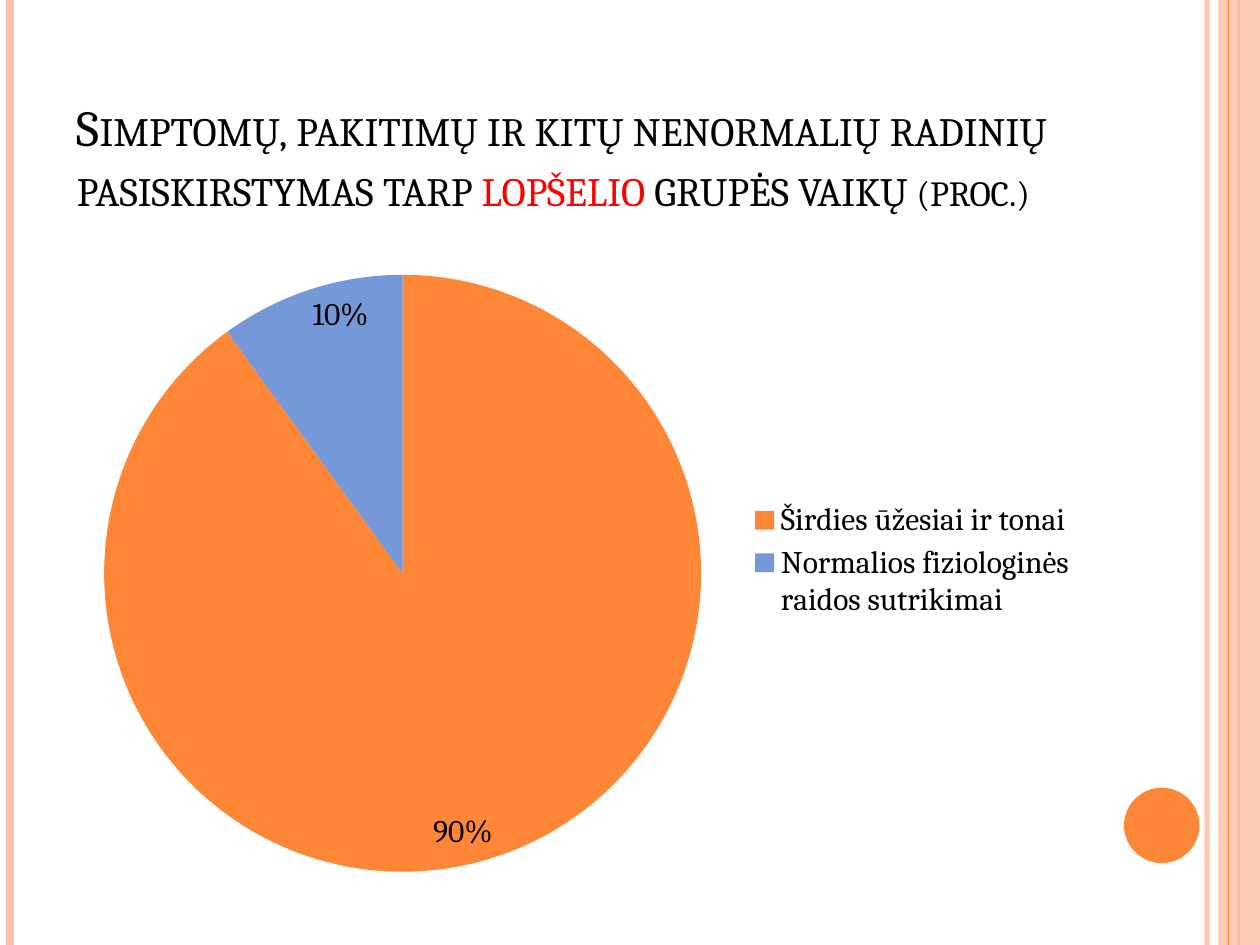
from lxml.etree import SubElement
from pptx import Presentation
from pptx.chart.data import CategoryChartData
from pptx.dml.color import RGBColor
from pptx.enum.chart import XL_CHART_TYPE, XL_LABEL_POSITION, XL_LEGEND_POSITION
from pptx.enum.shapes import MSO_CONNECTOR, MSO_SHAPE
from pptx.enum.text import MSO_ANCHOR
from pptx.oxml import parse_xml
from pptx.oxml.ns import nsdecls, qn
from pptx.util import Cm, Pt

FONT = "Cambria"
COLORS = {"black": "000000", "red": "FF0000", "orange": "FE8637",
          "peach": "FEC3AE", "blue": "7598D9"}
WIDTH, HEIGHT = 25.4, 19.05
TITLE = [
    ("Simptomų, pakitimų ir kitų nenormalių radinių pasiskirstymas tarp ", 28.8, "black"),
    ("lopšelio ", 28.8, "red"),
    ("grupės vaikų ", 28.8, "black"),
    ("(proc.)", 25.2, "black"),
]
SHARES = [("Širdies ūžesiai ir tonai", 0.9, "orange"),
          ("Normalios fiziologinės raidos sutrikimai", 0.1, "blue")]
BACK_STRIPES = [(24.33, 3, "peach", 93), (0.2, 4.5, "peach", 100), (24.97, 1.5, "orange", 100)]
FRONT_STRIPES = [(24.77, 0.75, "orange", 100)]
PIE_LAYOUT = ("inner", 0.04, 0.08, 0.58, 0.89)
LEGEND_LAYOUT = (None, 0.67, 0.41, 0.31, 0.19)


def color(name):
    return RGBColor.from_string(COLORS[name])


def set_opacity(shape, percent):
    fill_color = next(shape._element.spPr.iter(qn("a:srgbClr")))
    SubElement(fill_color, qn("a:alpha")).set("val", str(percent * 1000))


def add_stripes(slide, stripes):
    for x, weight, name, opacity in stripes:
        stripe = slide.shapes.add_connector(MSO_CONNECTOR.STRAIGHT, Cm(x), 0, Cm(x), Cm(HEIGHT))
        stripe.line.color.rgb = color(name)
        stripe.line.width = Pt(weight)
        SubElement(stripe._element.spPr, qn("a:effectLst"))
        if opacity < 100:
            set_opacity(stripe, opacity)


def add_plain_shape(slide, kind, box, name):
    shape = slide.shapes.add_shape(kind, *map(Cm, box))
    shape.shadow.inherit = False
    shape.fill.solid()
    shape.fill.fore_color.rgb = color(name)
    shape.line.fill.background()
    return shape


def add_title(slide):
    frame = slide.shapes.add_textbox(Cm(1.3), Cm(1.32), Cm(20.75), Cm(3.18)).text_frame
    frame.word_wrap = True
    frame.vertical_anchor = MSO_ANCHOR.BOTTOM
    paragraph = frame.paragraphs[0]
    paragraph.font.name = FONT
    for text, size, name in TITLE:
        run = paragraph.add_run()
        run.text = text
        run.font.name = FONT
        run.font.size = Pt(size)
        run.font.color.rgb = color(name)
        run._r.get_or_add_rPr().set("cap", "small")


def make_layout(target, x, y, width, height):
    values = [("layoutTarget", target)] if target else []
    values += [("xMode", "edge"), ("yMode", "edge"),
               ("x", x), ("y", y), ("w", width), ("h", height)]
    items = "".join(f'<c:{tag} val="{value}"/>' for tag, value in values)
    return parse_xml(f'<c:layout {nsdecls("c")}><c:manualLayout>{items}</c:manualLayout></c:layout>')


def replace_layout(parent, layout, index):
    for old in parent.findall(qn("c:layout")):
        parent.remove(old)
    parent.insert(index, layout)


def add_pie(slide):
    data = CategoryChartData(number_format="0%")
    data.categories = [label for label, _, _ in SHARES]
    data.add_series("Series 1", [share for _, share, _ in SHARES])
    chart = slide.shapes.add_chart(XL_CHART_TYPE.PIE, Cm(1.27), Cm(4.45),
                                   Cm(20.75), Cm(13.54), data).chart
    chart.has_title = False
    chart.font.name = FONT
    chart.font.size = Pt(18)
    chart.font.color.rgb = color("black")
    chart.has_legend = True
    chart.legend.position = XL_LEGEND_POSITION.RIGHT
    chart.legend.include_in_layout = False
    plot = chart.plots[0]
    plot.vary_by_categories = True
    for index, (_, _, name) in enumerate(SHARES):
        point_fill = plot.series[0].points[index].format.fill
        point_fill.solid()
        point_fill.fore_color.rgb = color(name)
    plot.has_data_labels = True
    labels = plot.data_labels
    labels.show_value = True
    labels.show_percentage = False
    labels.number_format = "0%"
    labels.number_format_is_linked = False
    labels.position = XL_LABEL_POSITION.INSIDE_END
    plot_area = chart._chartSpace.chart.plotArea
    replace_layout(plot_area, make_layout(*PIE_LAYOUT), 0)
    replace_layout(chart.legend._element, make_layout(*LEGEND_LAYOUT), 1)


def main():
    presentation = Presentation()
    presentation.slide_width, presentation.slide_height = Cm(WIDTH), Cm(HEIGHT)
    slide = presentation.slides.add_slide(presentation.slide_layouts[6])
    add_stripes(slide, BACK_STRIPES)
    band = add_plain_shape(slide, MSO_SHAPE.RECTANGLE, (24.56, 0, 0.84, HEIGHT), "peach")
    set_opacity(band, 87)
    add_stripes(slide, FRONT_STRIPES)
    add_plain_shape(slide, MSO_SHAPE.OVAL, (22.66, 15.88, 1.52, 1.52), "orange")
    add_title(slide)
    add_pie(slide)
    presentation.save("out.pptx")


if __name__ == "__main__":
    main()
